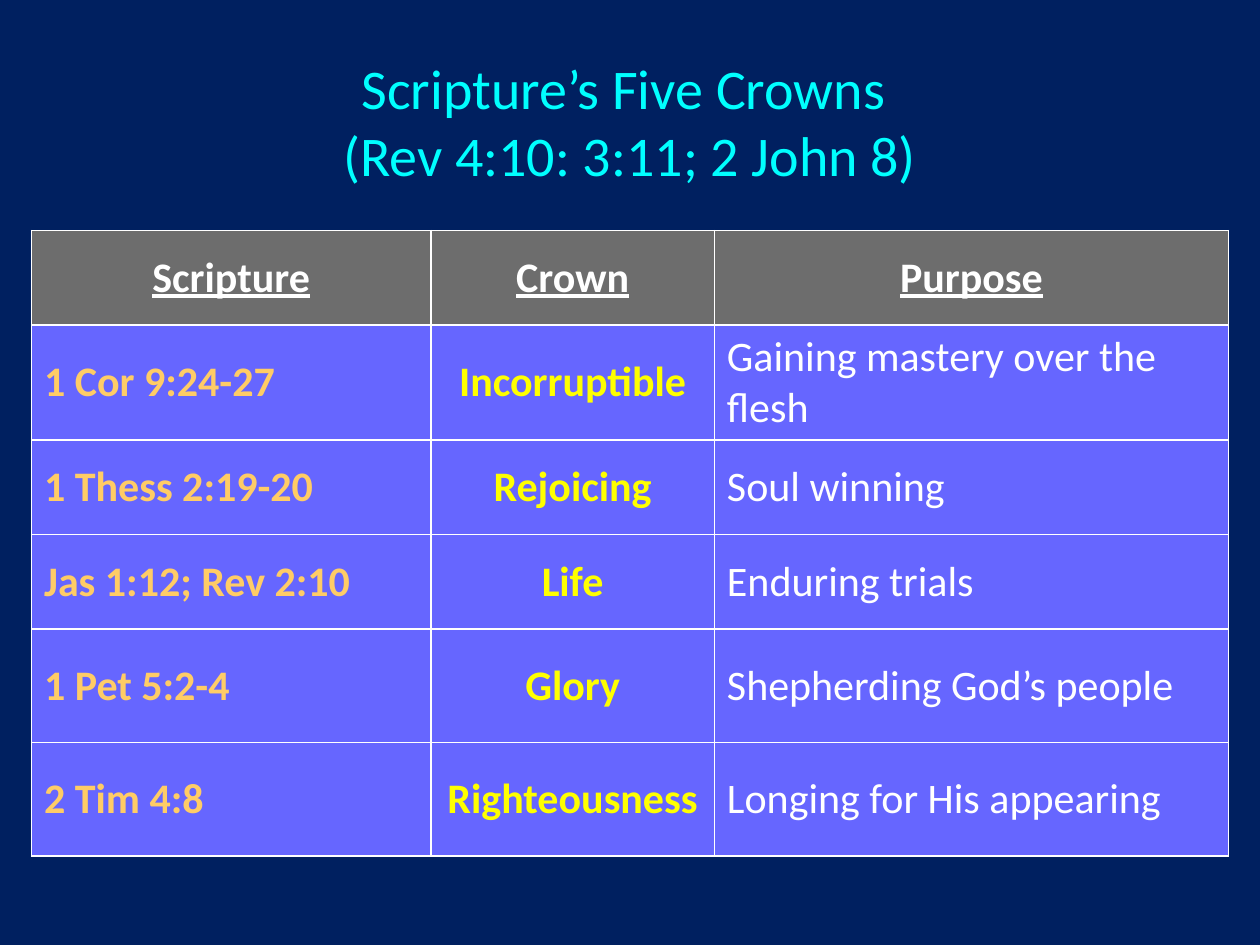
from dataclasses import dataclass

from lxml import etree
from pptx import Presentation
from pptx.dml.color import RGBColor
from pptx.enum.text import MSO_ANCHOR, PP_ALIGN
from pptx.oxml.ns import qn
from pptx.util import Inches, Pt


@dataclass(frozen=True)
class Theme:
    font: str = "Calibri"
    title_size: int = 32
    table_size: int = 24
    background: str = "002060"
    title: str = "00FFFF"
    header_fill: str = "6D6D6D"
    body_fill: str = "6666FF"
    scripture: str = "FFCC66"
    crown: str = "FFFF00"
    white: str = "FFFFFF"


THEME = Theme()

TITLE = "Scripture’s Five Crowns \v(Rev 4:10: 3:11; 2 John 8)"
HEADINGS = ("Scripture", "Crown", "Purpose")
CROWNS = [
    ("1 Cor 9:24-27", "Incorruptible", "Gaining mastery over the flesh"),
    ("1 Thess 2:19-20", "Rejoicing", "Soul winning"),
    ("Jas 1:12; Rev 2:10", "Life", "Enduring trials"),
    ("1 Pet 5:2-4", "Glory", "Shepherding God’s people"),
    ("2 Tim 4:8", "Righteousness", "Longing for His appearing"),
]
COLUMN_WIDTHS = (3.17, 2.25, 4.08)
ROW_HEIGHTS = (0.75, 0.9, 0.75, 0.75, 0.9, 0.9)

# Colour, bold and alignment of each body column
COLUMN_STYLES = [
    (THEME.scripture, True, PP_ALIGN.LEFT),
    (THEME.crown, True, PP_ALIGN.CENTER),
    (THEME.white, False, PP_ALIGN.LEFT),
]


def style_paragraph(paragraph, size, color, align, bold=False, underline=False):
    paragraph.alignment = align
    font = paragraph.font
    font.name = THEME.font
    font.size = Pt(size)
    font.color.rgb = RGBColor.from_string(color)
    font.bold = bold
    font.underline = underline


def add_title(slide):
    title = slide.shapes.title
    title.left, title.top = Inches(0.75), Inches(0.33)
    title.width, title.height = Inches(8.5), Inches(1.25)
    frame = title.text_frame
    frame.text = TITLE
    frame.vertical_anchor = MSO_ANCHOR.MIDDLE
    style_paragraph(frame.paragraphs[0], THEME.title_size, THEME.title,
                    PP_ALIGN.CENTER)


def set_borders(cell, color, width):
    properties = cell._tc.get_or_add_tcPr()
    for position, side in enumerate(("a:lnL", "a:lnR", "a:lnT", "a:lnB")):
        line = etree.Element(qn(side), w=str(width))
        fill = etree.SubElement(line, qn("a:solidFill"))
        etree.SubElement(fill, qn("a:srgbClr"), val=color)
        # Borders come before the fill in the cell properties
        properties.insert(position, line)


def fill_cell(cell, words, fill, color, align, bold, underline=False):
    cell.text = words
    cell.vertical_anchor = MSO_ANCHOR.MIDDLE
    cell.fill.solid()
    cell.fill.fore_color.rgb = RGBColor.from_string(fill)
    style_paragraph(cell.text_frame.paragraphs[0], THEME.table_size, color,
                    align, bold, underline)
    set_borders(cell, THEME.white, Pt(1))


def add_crowns_table(slide):
    crowns = slide.shapes.add_table(
        len(ROW_HEIGHTS), len(COLUMN_WIDTHS), Inches(0.25), Inches(1.83),
        Inches(sum(COLUMN_WIDTHS)), Inches(sum(ROW_HEIGHTS))).table
    for column, width in zip(crowns.columns, COLUMN_WIDTHS):
        column.width = Inches(width)
    for row, height in zip(crowns.rows, ROW_HEIGHTS):
        row.height = Inches(height)

    # Header row
    for column, heading in enumerate(HEADINGS):
        fill_cell(crowns.cell(0, column), heading, THEME.header_fill,
                  THEME.white, PP_ALIGN.CENTER, bold=True, underline=True)

    # One row for each crown
    for row, entry in enumerate(CROWNS, start=1):
        for column, (words, style) in enumerate(zip(entry, COLUMN_STYLES)):
            color, bold, align = style
            fill_cell(crowns.cell(row, column), words, THEME.body_fill,
                      color, align, bold)


def main():
    deck = Presentation()
    deck.slide_width, deck.slide_height = Inches(10), Inches(7.5)
    slide = deck.slides.add_slide(deck.slide_layouts[5])
    background = slide.background.fill
    background.solid()
    background.fore_color.rgb = RGBColor.from_string(THEME.background)
    add_title(slide)
    add_crowns_table(slide)
    deck.save("out.pptx")


if __name__ == "__main__":
    main()
